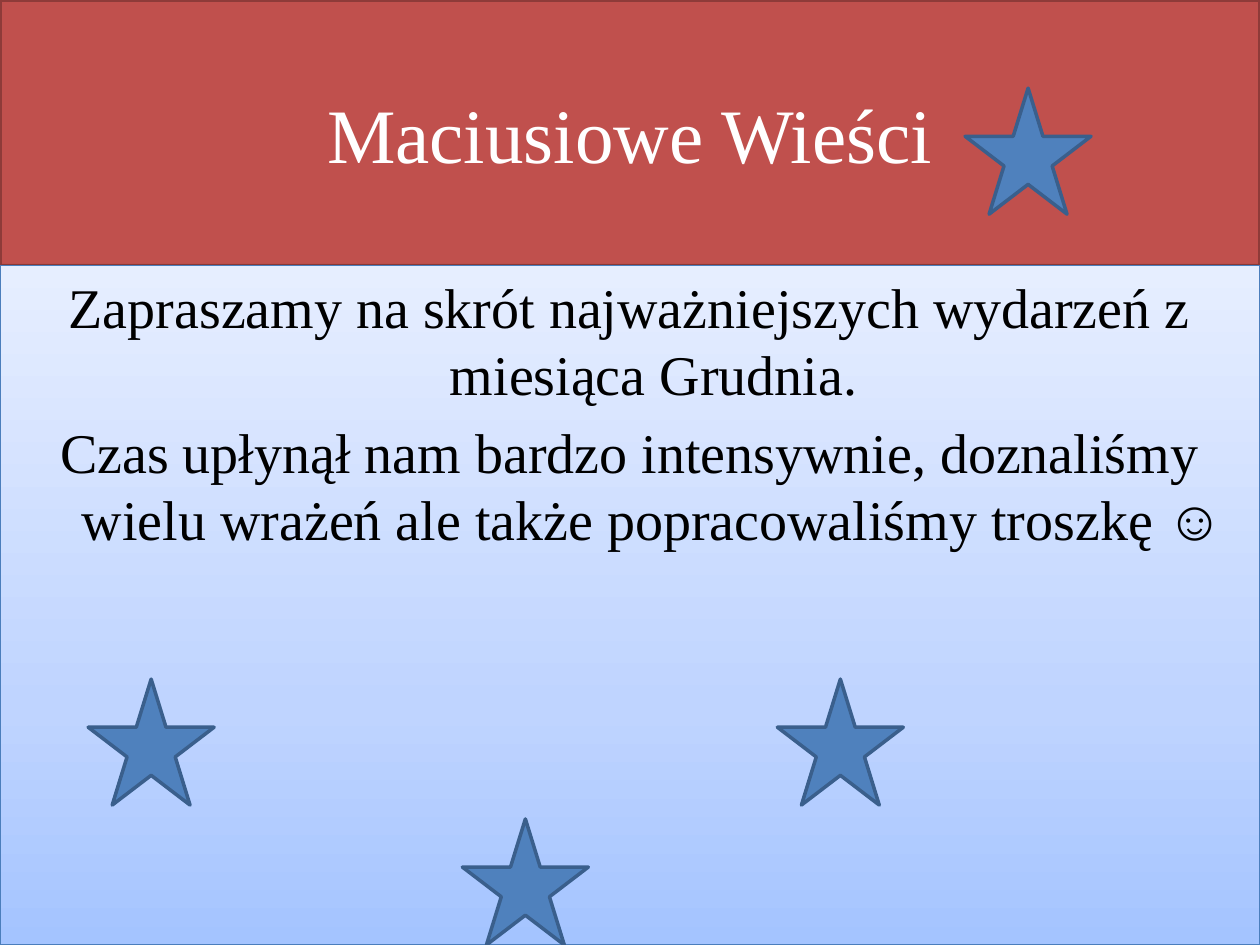
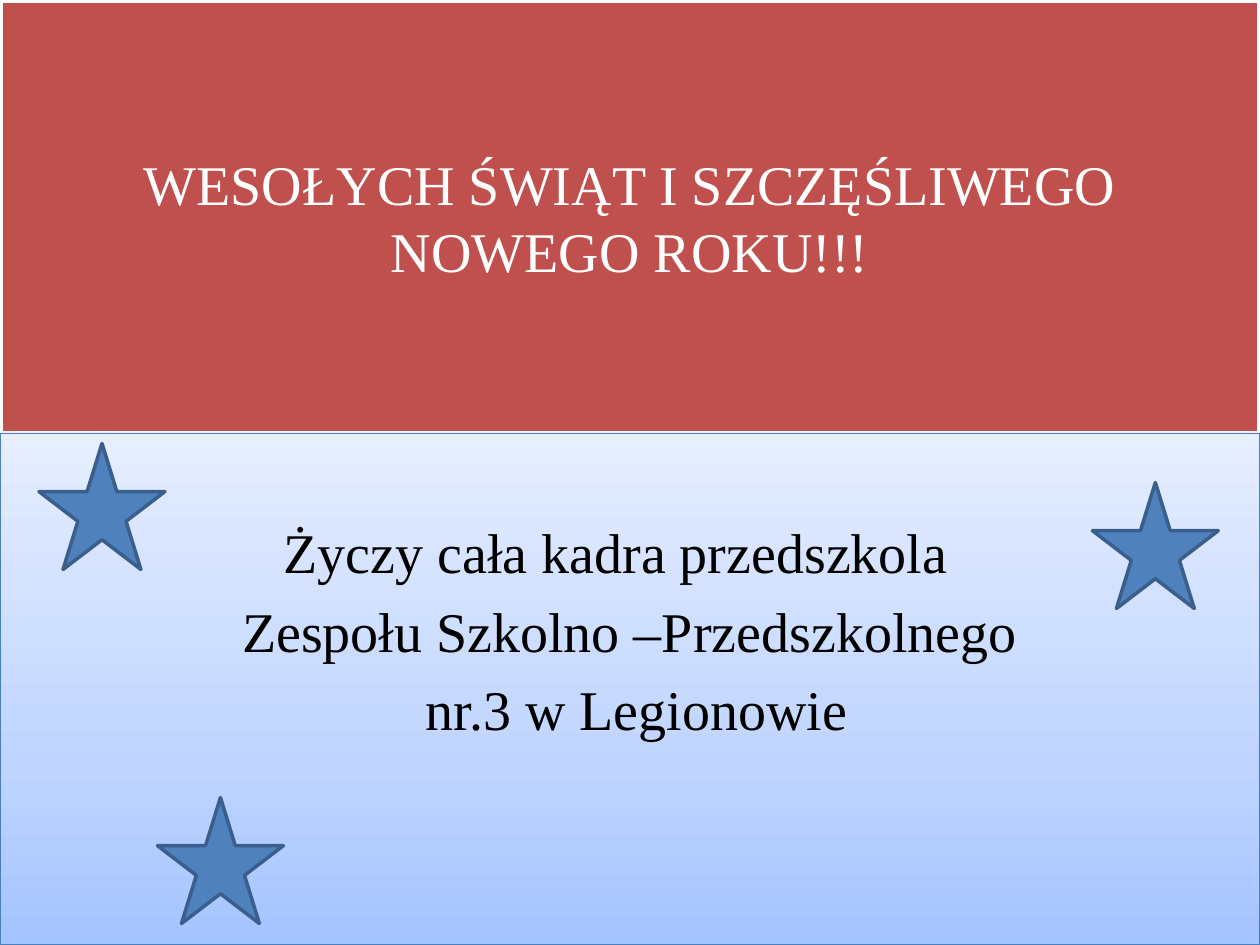
from copy import deepcopy
from dataclasses import dataclass

from lxml.etree import SubElement
from pptx import Presentation
from pptx.dml.color import RGBColor
from pptx.enum.shapes import MSO_SHAPE
from pptx.enum.text import MSO_ANCHOR, PP_ALIGN
from pptx.oxml.ns import qn
from pptx.util import Inches, Pt


@dataclass(frozen=True)
class Theme:
    font: str = "Times New Roman"
    red: str = "C0504D"
    red_edge: str = "8E3B39"
    white: str = "FFFFFF"
    ink: str = "000000"
    star: str = "4F81BD"
    star_edge: str = "3A5F8C"
    panel_edge: str = "4B7EBC"
    panel_stops: tuple = ((0, "A4C4FF"), (0.35, "BFD4FF"), (1, "E6EEFF"))
    headline_size: int = 44
    text_size: int = 32
    paragraph_gap: float = 6.4
    hanging: float = 0.38
    width: float = 10
    height: float = 7.5


def set_attributes(target, values):
    for name, value in values.items():
        setattr(target, name, value)


class GreetingDeck:
    def __init__(self, theme):
        self.theme = theme
        self.presentation = Presentation()
        set_attributes(self.presentation, {
            "slide_width": Inches(theme.width),
            "slide_height": Inches(theme.height),
        })
        self.slide = None

    def new_slide(self):
        blank = self.presentation.slide_layouts[6]
        self.slide = self.presentation.slides.add_slide(blank)

    def outlined(self, preset, box, edge, edge_width):
        shape = self.slide.shapes.add_shape(preset, *map(Inches, box))
        shape.shadow.inherit = False
        shape.line.color.rgb = RGBColor.from_string(edge)
        shape.line.width = Pt(edge_width)
        return shape

    def solid(self, shape, color):
        shape.fill.solid()
        shape.fill.fore_color.rgb = RGBColor.from_string(color)

    def soft_shadow(self, shape):
        effects = shape._element.spPr.find(qn("a:effectLst"))
        shadow = SubElement(effects, qn("a:outerShdw"), {
            "blurRad": str(Pt(3.1)), "dist": str(Pt(1.6)),
            "dir": "5400000", "rotWithShape": "0",
        })
        color = SubElement(shadow, qn("a:srgbClr"), val=self.theme.ink)
        SubElement(color, qn("a:alpha"), val="38000")

    def panel_gradient(self, shape):
        fill = shape.fill
        fill.gradient()
        fill.gradient_angle = 90
        stop_list = shape._element.spPr.find(".//" + qn("a:gsLst"))
        stop_list.append(deepcopy(stop_list[-1]))
        for stop, (position, color) in zip(fill.gradient_stops, self.theme.panel_stops):
            stop.position = position
            stop.color.rgb = RGBColor.from_string(color)

    def centred_text(self, paragraph, text, size, color):
        paragraph.alignment = PP_ALIGN.CENTER
        run = paragraph.add_run()
        run.text = text
        set_attributes(run.font, {"name": self.theme.font, "size": Pt(size)})
        run.font.color.rgb = RGBColor.from_string(color)

    def title_band(self, text, height, size, edge, edge_width, shadow=False):
        box = (0, 0, self.theme.width, height)
        band = self.outlined(MSO_SHAPE.RECTANGLE, box, edge, edge_width)
        self.solid(band, self.theme.red)
        if shadow:
            self.soft_shadow(band)
        frame = band.text_frame
        set_attributes(frame, {"word_wrap": True, "vertical_anchor": MSO_ANCHOR.MIDDLE})
        self.centred_text(frame.paragraphs[0], text, size, self.theme.white)

    def body_panel(self, lines, top, inset_top=0.05, inset_right=0.1):
        """Fill the slide below top; lines are (text, first-line shift) pairs."""
        theme = self.theme
        box = (0, top, theme.width, theme.height - top)
        panel = self.outlined(MSO_SHAPE.RECTANGLE, box, theme.panel_edge, 0.75)
        self.panel_gradient(panel)
        self.soft_shadow(panel)
        frame = panel.text_frame
        set_attributes(frame, {
            "word_wrap": True,
            "vertical_anchor": MSO_ANCHOR.TOP,
            "margin_top": Inches(inset_top),
            "margin_right": Inches(inset_right),
        })
        for index, (text, shift) in enumerate(lines):
            paragraph = frame.add_paragraph() if index else frame.paragraphs[0]
            paragraph.space_before = Pt(theme.paragraph_gap)
            indents = {"marL": theme.hanging, "indent": shift - theme.hanging}
            for name, length in indents.items():
                paragraph._p.get_or_add_pPr().set(name, str(Inches(length)))
            self.centred_text(paragraph, text, theme.text_size, theme.ink)

    def stars(self, corners):
        for left, top in corners:
            star = self.outlined(MSO_SHAPE.STAR_5_POINT, (left, top, 1, 1),
                                 self.theme.star_edge, 2)
            self.solid(star, self.theme.star)


def build_welcome(deck):
    theme = deck.theme
    band_height = 2.11
    deck.new_slide()
    deck.title_band("Maciusiowe Wieści", band_height, theme.headline_size,
                    theme.red_edge, 2)
    deck.body_panel([
        ("Zapraszamy na skrót najważniejszych wydarzeń z miesiąca Grudnia.", 0),
        ("Czas upłynął nam bardzo intensywnie, doznaliśmy wielu wrażeń "
         "ale także popracowaliśmy troszkę ☺", 0),
    ], band_height)
    deck.stars([(7.66, 0.7), (6.17, 5.39), (0.7, 5.39), (3.67, 6.5)])


def build_wishes(deck):
    theme = deck.theme
    band_height = 3.44
    deck.new_slide()
    deck.title_band("WESOŁYCH ŚWIĄT I SZCZĘŚLIWEGO NOWEGO ROKU!!!", band_height,
                    theme.text_size, theme.white, 3, shadow=True)
    deck.body_panel([
        ("Życzy cała kadra przedszkola", 0),
        ("Zespołu Szkolno –Przedszkolnego", 0.22),
        ("nr.3 w Legionowie", 0.33),
    ], band_height, inset_top=0.67, inset_right=0.32)
    deck.stars([(8.67, 3.83), (1.25, 6.33), (0.31, 3.52)])


def main():
    deck = GreetingDeck(Theme())
    build_welcome(deck)
    build_wishes(deck)
    deck.presentation.save("out.pptx")


if __name__ == "__main__":
    main()
